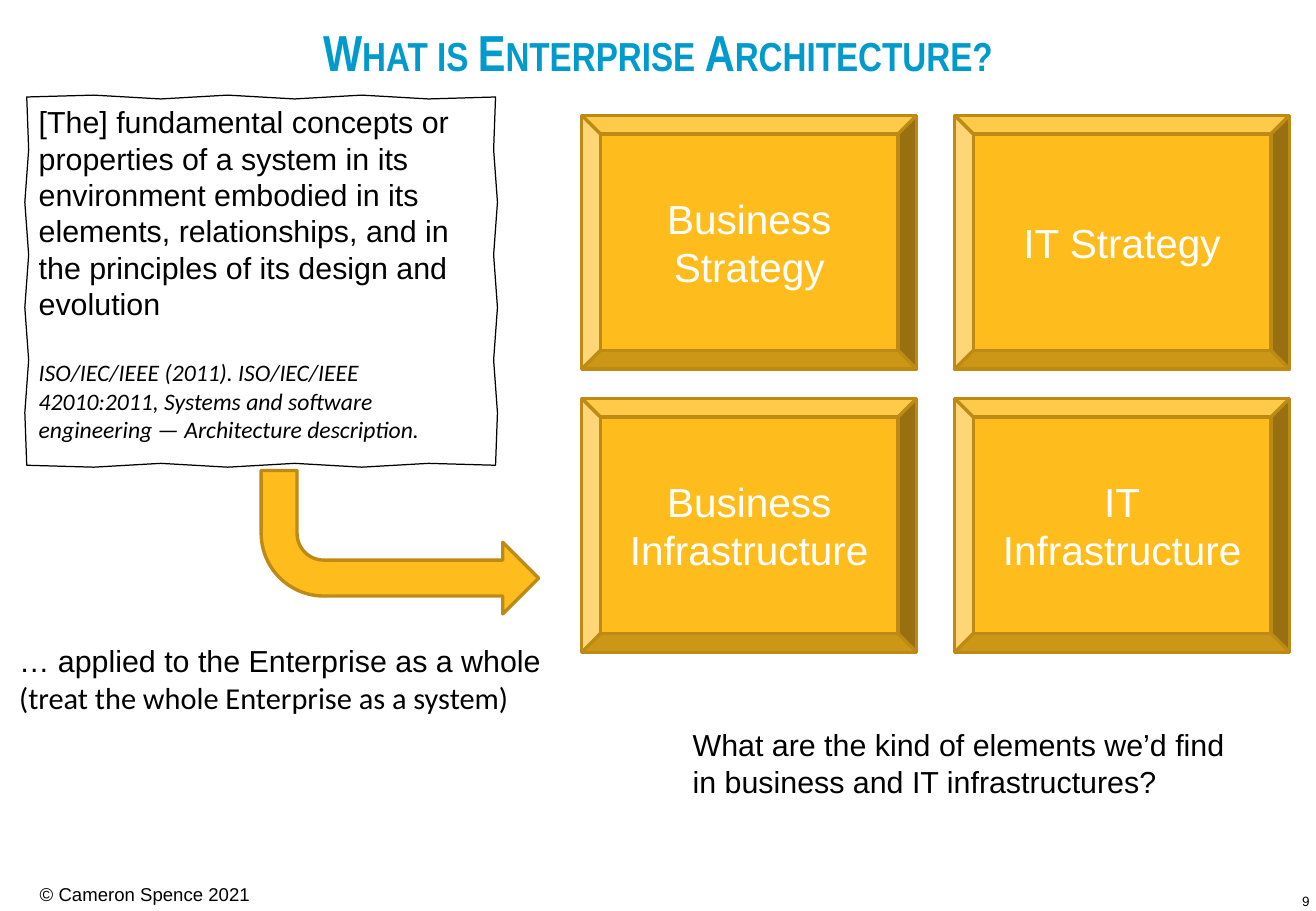
from dataclasses import dataclass

from pptx import Presentation
from pptx.dml.color import RGBColor
from pptx.enum.shapes import MSO_SHAPE
from pptx.enum.text import MSO_ANCHOR, MSO_AUTO_SIZE, PP_ALIGN
from pptx.oxml.ns import qn
from pptx.util import Cm, Pt

COLOURS = {
    "title": "009BCC",
    "text": "000000",
    "tile": "FFBC1D",
    "tile_edge": "BD8B15",
    "tile_text": "FFFFFF",
}
TITLE_LAYOUT = 5
WOBBLE = 0.04
SIDE_STEPS = 7


@dataclass
class Box:
    left: float
    top: float
    width: float
    height: float

    def lengths(self):
        return Cm(self.left), Cm(self.top), Cm(self.width), Cm(self.height)


def colour(name):
    return RGBColor.from_string(COLOURS[name])


def set_insets(frame, left=0.25, top=0.13, right=0.25, bottom=0.13):
    frame.margin_left, frame.margin_top = Cm(left), Cm(top)
    frame.margin_right, frame.margin_bottom = Cm(right), Cm(bottom)


def format_para(para, size, name="Arial", ink="text", align=PP_ALIGN.LEFT):
    para.alignment = align
    for span in para.runs:
        span.font.size = Pt(size)
        span.font.name = name
        span.font.color.rgb = colour(ink)


def add_text(page, box, text, size):
    frame = page.shapes.add_textbox(*box.lengths()).text_frame
    frame.word_wrap = True
    set_insets(frame)
    frame.text = text
    for para in frame.paragraphs:
        format_para(para, size)
    return frame


def add_title(page, box, text):
    title = page.shapes.title
    title.left, title.top, title.width, title.height = box.lengths()
    frame = title.text_frame
    frame.text = text
    frame.auto_size = MSO_AUTO_SIZE.NONE
    frame.vertical_anchor = MSO_ANCHOR.MIDDLE
    set_insets(frame, 0.2, 0.5, 0.2, 0.12)
    para = frame.paragraphs[0]
    para.line_spacing = 0.9
    format_para(para, 30, "Arial Narrow", "title", PP_ALIGN.CENTER)
    span = para.runs[0]
    span.font.bold = True
    span.font._element.set("cap", "small")


def sketchy_outline(box):
    right, bottom = box.left + box.width, box.top + box.height
    corners = [(box.left, box.top), (right, box.top), (right, bottom), (box.left, bottom)]
    points = []
    for side, (x, y) in enumerate(corners):
        next_x, next_y = corners[(side + 1) % 4]
        across = side % 2
        for step in range(SIDE_STEPS):
            part = step / SIDE_STEPS
            shift = WOBBLE * (-1) ** step if step else 0
            points.append((
                Cm(x + (next_x - x) * part + shift * across),
                Cm(y + (next_y - y) * part + shift * (1 - across)),
            ))
    return points


def add_definition(page, box, quote, citation):
    points = sketchy_outline(box)
    builder = page.shapes.build_freeform(*points[0])
    builder.add_line_segments(points[1:], close=True)
    note = builder.convert_to_shape()
    note.shadow.inherit = False
    note.fill.background()
    note.line.color.rgb = colour("text")
    note.line.width = Pt(0.75)
    frame = note.text_frame
    frame.word_wrap = True
    frame.vertical_anchor = MSO_ANCHOR.TOP
    set_insets(frame, 0.25 + WOBBLE, 0.13 + WOBBLE, 0.25 + WOBBLE, 0.13 + WOBBLE)
    frame.text = f"{quote}\n{citation}"
    quote_para, citation_para = frame.paragraphs
    format_para(quote_para, 18)
    format_para(citation_para, 14, "Calibri")
    citation_para.space_before = Pt(21.5)
    citation_para.runs[0].font.italic = True


def add_gold_shape(page, kind, box):
    shape = page.shapes.add_shape(kind, *box.lengths())
    shape.shadow.inherit = False
    shape.fill.solid()
    shape.fill.fore_color.rgb = colour("tile")
    shape.line.color.rgb = colour("tile_edge")
    shape.line.width = Pt(2)
    return shape


def add_arrow(page, box):
    arrow = add_gold_shape(page, MSO_SHAPE.BENT_ARROW, box)
    arrow._element.spPr.find(qn("a:xfrm")).set("flipV", "1")


def add_tiles(page, box, rows, gap_x, gap_y):
    width = (box.width - gap_x * (len(rows[0]) - 1)) / len(rows[0])
    height = (box.height - gap_y * (len(rows) - 1)) / len(rows)
    for row, labels in enumerate(rows):
        for column, label in enumerate(labels):
            place = Box(
                box.left + column * (width + gap_x),
                box.top + row * (height + gap_y),
                width,
                height,
            )
            tile = add_gold_shape(page, MSO_SHAPE.BEVEL, place)
            tile.adjustments[0] = 0.074
            frame = tile.text_frame
            frame.word_wrap = True
            frame.vertical_anchor = MSO_ANCHOR.MIDDLE
            set_insets(frame)
            frame.text = label
            for para in frame.paragraphs:
                format_para(para, 24, ink="tile_text", align=PP_ALIGN.CENTER)


def add_application(page, box, lines):
    frame = add_text(page, box, "\n".join(lines), 18)
    format_para(frame.paragraphs[1], 18, "Calibri")


def add_footer(page, box, copyright_line, number):
    notice = Box(box.left, box.top, 5.54, box.height)
    frame = add_text(page, notice, copyright_line, 11)
    set_insets(frame, 0.8, 0.1, 0.2, 0.1)
    corner = Box(box.left + box.width - 0.74, box.top + 0.36, 0.71, 0.28)
    frame = add_text(page, corner, number, 8)
    set_insets(frame, 0.1, 0, 0.1, 0)
    frame.vertical_anchor = MSO_ANCHOR.MIDDLE
    para = frame.paragraphs[0]
    para.alignment = PP_ALIGN.RIGHT
    para.line_spacing = 0.85


def main():
    deck = Presentation()
    deck.slide_width, deck.slide_height = Cm(27.51), Cm(19.05)
    page = deck.slides.add_slide(deck.slide_layouts[TITLE_LAYOUT])
    add_title(page, Box(0, 0, 27.51, 1.92), "What is Enterprise Architecture?")
    add_definition(
        page,
        Box(0.56, 2.03, 9.8, 7.7),
        "[The] fundamental concepts or properties of a system in its environment embodied "
        "in its elements, relationships, and in the principles of its design and evolution",
        "ISO/IEC/IEEE (2011). ISO/IEC/IEEE 42010:2011, Systems and software engineering "
        "— Architecture description.",
    )
    add_arrow(page, Box(5.46, 9.84, 5.8, 3))
    add_application(page, Box(0.15, 13.3, 11.81, 1.8), [
        "… applied to the Enterprise as a whole",
        "(treat the whole Enterprise as a system)",
    ])
    add_tiles(page, Box(12.16, 2.41, 14.8, 11.23), [
        ["Business Strategy", "IT Strategy"],
        ["Business Infrastructure", "IT\nInfrastructure"],
    ], 0.79, 0.61)
    add_text(
        page,
        Box(14.23, 15.06, 11.81, 1.8),
        "What are the kind of elements we’d find in business and IT infrastructures?",
        18,
    )
    add_footer(page, Box(0.03, 18.36, 27.48, 0.61), "© Cameron Spence 2021", "9")
    deck.save("out.pptx")


if __name__ == "__main__":
    main()
